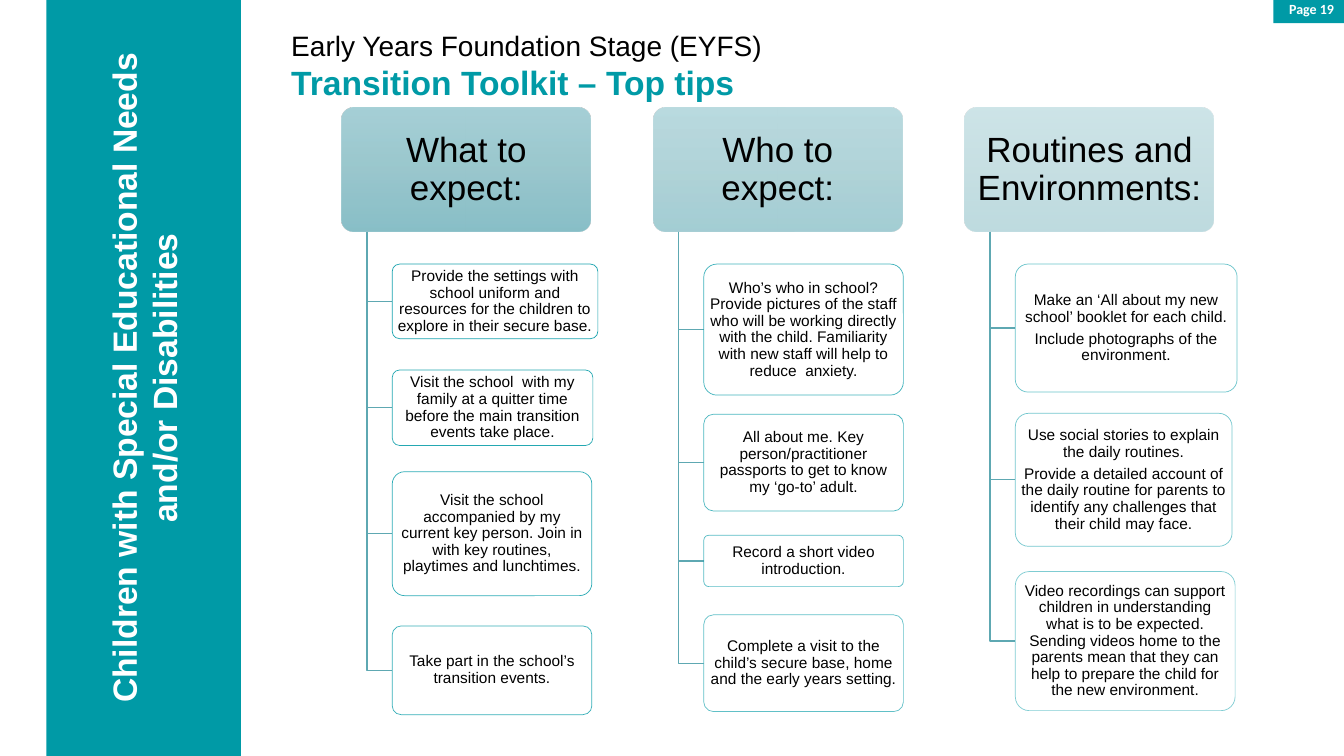
from copy import deepcopy
from dataclasses import dataclass

from lxml.etree import SubElement
from pptx import Presentation
from pptx.dml.color import RGBColor
from pptx.enum.shapes import MSO_SHAPE
from pptx.enum.text import MSO_ANCHOR, PP_ALIGN
from pptx.oxml.ns import qn
from pptx.util import Inches, Pt

PAGE_LABEL = "Page 19"
SIDEBAR = "Children with Special Educational Needs and/or Disabilities"
STAGE = "Early Years Foundation Stage (EYFS)"
TITLE = "Transition Toolkit – Top tips"

# Each column: heading, then tips as (top, width, height, paragraphs)
COLUMNS = [
    ("What to expect:", [
        (2.62, 2.04, 0.74, ["Provide the settings with school uniform and resources for "
                            "the children to explore in their secure base."]),
        (3.67, 1.99, 0.75, ["Visit the school  with my family at a quitter time before "
                            "the main transition events take place."]),
        (4.68, 1.98, 1.23, ["Visit the school accompanied by my current key person. Join "
                            "in with key routines, playtimes and lunchtimes."]),
        (6.21, 1.98, 0.88, ["Take part in the school’s transition events."]),
    ]),
    ("Who to expect:", [
        (2.62, 1.98, 1.3, ["Who’s who in school? Provide pictures of the staff who will be "
                           "working directly with the child. Familiarity with new staff "
                           "will help to reduce  anxiety."]),
        (4.11, 1.98, 0.96, ["All about me. Key person/practitioner passports to get to "
                            "know my ‘go-to’ adult."]),
        (5.31, 1.98, 0.51, ["Record a short video introduction."]),
        (6.1, 1.98, 0.96, ["Complete a visit to the child’s secure base, home and the "
                           "early years setting."]),
    ]),
    ("Routines and Environments:", [
        (2.62, 2.2, 1.27, ["Make an ‘All about my new school’ booklet for each child.",
                           "Include photographs of the environment."]),
        (4.1, 2.15, 1.32, ["Use social stories to explain the daily routines.",
                           "Provide a detailed account of the daily routine for parents to "
                           "identify any challenges that their child may face."]),
        (5.67, 2.18, 1.38, ["Video recordings can support children in understanding what is "
                            "to be expected. Sending videos home to the parents mean that "
                            "they can help to prepare the child for the new environment."]),
    ]),
]


@dataclass(frozen=True)
class Theme:
    teal: RGBColor = RGBColor.from_string("009AA6")
    branch: RGBColor = RGBColor.from_string("5EA8B2")
    white: RGBColor = RGBColor.from_string("FFFFFF")
    black: RGBColor = RGBColor.from_string("000000")
    heading_stops: tuple = ("9DCBD2", "90C1C8", "7CB8C1")
    body_font: str = "Arial"
    page_font: str = "Calibri"
    page_size: int = 10
    tip_size: int = 11
    stage_size: int = 20
    title_size: int = 24
    heading_size: int = 25


THEME = Theme()
COLUMN_LEFT, COLUMN_PITCH = 3.39, 3.09
HEADING_TOP, HEADING_WIDTH, HEADING_HEIGHT = 1.07, 2.47, 1.23
TRUNK_INDENT, TIP_INDENT = 0.25, 0.5


def set_alpha(element, percent):
    """Give every RGB colour inside element the same opacity."""
    for colour in element.iter(qn("a:srgbClr")):
        SubElement(colour, qn("a:alpha"), val=str(percent * 1000))


def add_box(slide, preset, left, top, width, height, fill=None):
    box = slide.shapes.add_shape(preset, Inches(left), Inches(top), Inches(width), Inches(height))
    box.shadow.inherit = False
    box.line.fill.background()
    if fill is not None:
        box.fill.solid()
        box.fill.fore_color.rgb = fill
    return box


def style(paragraph, text, size, colour, bold=False, align=PP_ALIGN.CENTER, font=THEME.body_font):
    paragraph.text = text
    paragraph.alignment = align
    paragraph.font.name = font
    paragraph.font.size = Pt(size)
    paragraph.font.bold = bold
    paragraph.font.color.rgb = colour


def fill_rounded(box, paragraphs, size, inset_x, inset_y):
    box.adjustments[0] = 0.1
    frame = box.text_frame
    frame.word_wrap = True
    frame.vertical_anchor = MSO_ANCHOR.MIDDLE
    frame.margin_left = frame.margin_right = Inches(inset_x)
    frame.margin_top = frame.margin_bottom = Inches(inset_y)
    for index, text in enumerate(paragraphs):
        paragraph = frame.add_paragraph() if index else frame.paragraphs[0]
        style(paragraph, text, size, THEME.black)
        paragraph.line_spacing = 0.9
        paragraph.space_after = Pt(0.35 * size)


def add_heading(slide, left, text, opacity):
    heading = add_box(slide, MSO_SHAPE.ROUNDED_RECTANGLE, left, HEADING_TOP,
                      HEADING_WIDTH, HEADING_HEIGHT)
    heading.fill.gradient()
    heading.fill.gradient_angle = 270
    stops = heading._element.spPr.find(qn("a:gradFill")).find(qn("a:gsLst"))
    stops.insert(1, deepcopy(stops[0]))
    for index, stop in enumerate(heading.fill.gradient_stops):
        stop.position = index / 2
        stop.color.rgb = RGBColor.from_string(THEME.heading_stops[index])
    set_alpha(stops, opacity)
    fill_rounded(heading, [text], THEME.heading_size, 0.05, 0.03)


def add_branch(slide, column_left, tip_middle):
    """Draw the elbow from under a heading to the left side of a tip."""
    trunk = Inches(column_left + TRUNK_INDENT)
    start = Inches(HEADING_TOP + HEADING_HEIGHT)
    end = Inches(tip_middle)
    builder = slide.shapes.build_freeform(trunk, start)
    builder.add_line_segments([(trunk, end), (Inches(column_left + TIP_INDENT), end)], close=False)
    branch = builder.convert_to_shape()
    branch.shadow.inherit = False
    branch.fill.background()
    branch.line.color.rgb = THEME.branch
    branch.line.width = Pt(1)


def add_tip(slide, left, top, width, height, paragraphs, line_opacity):
    tip = add_box(slide, MSO_SHAPE.ROUNDED_RECTANGLE, left, top, width, height, THEME.white)
    tip.line.color.rgb = THEME.teal
    tip.line.width = Pt(0.5)
    set_alpha(tip._element.spPr.find(qn("a:solidFill")), 90)
    set_alpha(tip._element.spPr.find(qn("a:ln")), line_opacity)
    fill_rounded(tip, paragraphs, THEME.tip_size, 0.02, 0.02)


def add_frame(slide):
    """Add the page label, the sidebar and the title."""
    page = add_box(slide, MSO_SHAPE.RECTANGLE, 12.63, -0.04, 0.7, 0.27, THEME.teal)
    page.text_frame.word_wrap = True
    page.text_frame.vertical_anchor = MSO_ANCHOR.TOP
    style(page.text_frame.paragraphs[0], PAGE_LABEL, THEME.page_size, THEME.white, True,
          PP_ALIGN.RIGHT, THEME.page_font)

    sidebar = add_box(slide, MSO_SHAPE.RECTANGLE, 0.46, 0, 1.93, 7.5, THEME.teal)
    sidebar.text_frame.word_wrap = True
    sidebar.text_frame.vertical_anchor = MSO_ANCHOR.MIDDLE
    sidebar._element.txBody.find(qn("a:bodyPr")).set("vert", "vert270")
    style(sidebar.text_frame.paragraphs[0], SIDEBAR, THEME.title_size, THEME.white, True)

    title = slide.shapes.add_textbox(Inches(2.79), Inches(0.23), Inches(5.49), Inches(0.84))
    title.text_frame.word_wrap = True
    style(title.text_frame.paragraphs[0], STAGE, THEME.stage_size, THEME.black,
          align=PP_ALIGN.LEFT)
    style(title.text_frame.add_paragraph(), TITLE, THEME.title_size, THEME.teal, True,
          PP_ALIGN.LEFT)


def main():
    deck = Presentation()
    deck.slide_width, deck.slide_height = Inches(13.33), Inches(7.5)
    slide = deck.slides.add_slide(deck.slide_layouts[6])
    add_frame(slide)
    line_opacity = 90
    for index, (heading, tips) in enumerate(COLUMNS):
        left = COLUMN_LEFT + index * COLUMN_PITCH
        add_heading(slide, left, heading, 90 - 20 * index)
        for top, width, height, paragraphs in tips:
            add_branch(slide, left, top + height / 2)
            add_tip(slide, left + TIP_INDENT, top, width, height, paragraphs, line_opacity)
            line_opacity -= 4
    deck.save("out.pptx")


if __name__ == "__main__":
    main()
